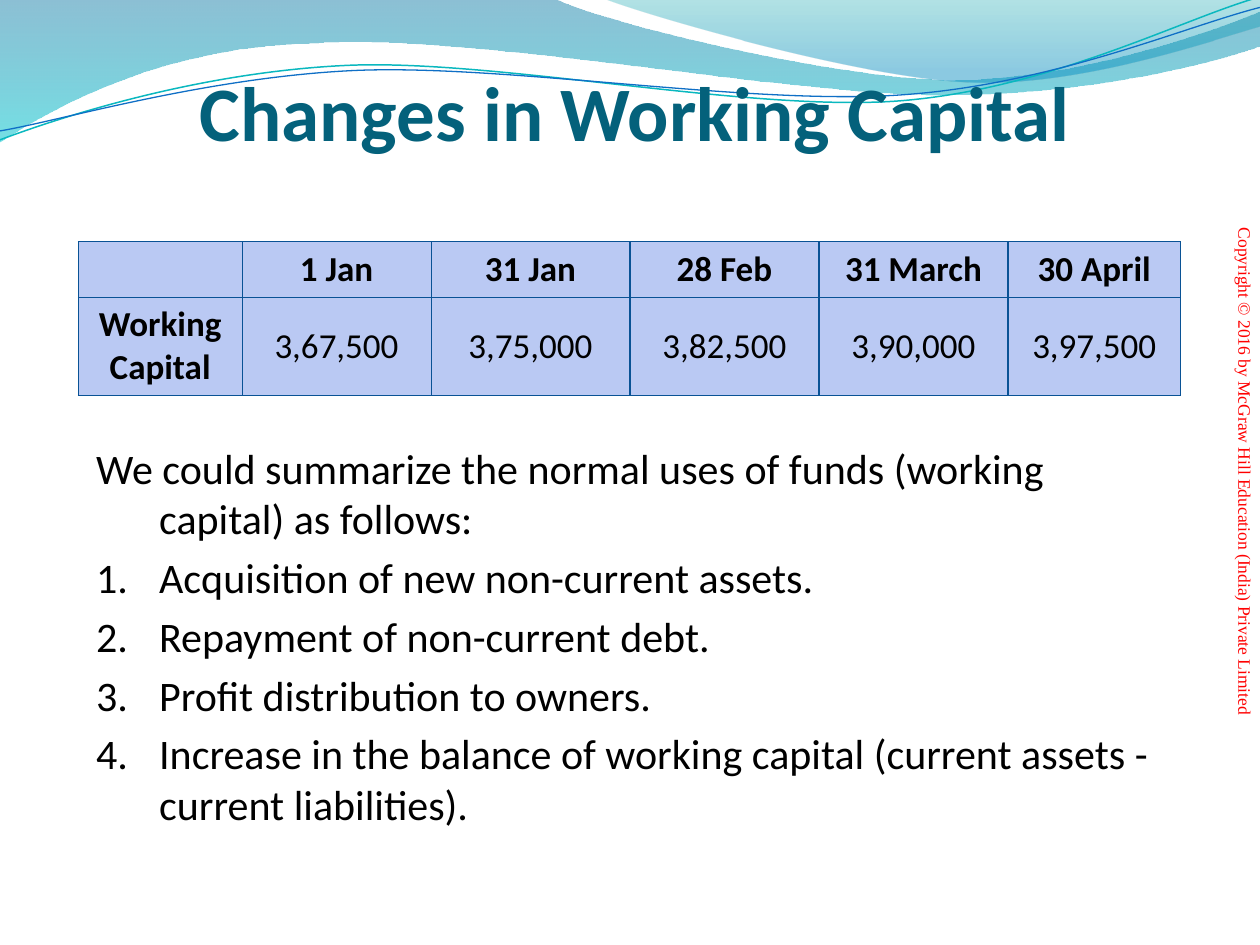
from lxml import etree
from pptx import Presentation
from pptx import util as u
from pptx.dml.color import RGBColor
from pptx.enum import text
from pptx.oxml import ns

BLACK = RGBColor(0x00, 0x00, 0x00)
RED = RGBColor(0xFF, 0x00, 0x00)
TITLE_TEAL = RGBColor(0x04, 0x61, 0x7B)
CELL_BLUE = RGBColor(0xBA, 0xC9, 0xF3)
BORDER_BLUE = RGBColor(0x09, 0x52, 0x95)
WAVE_BLUE = RGBColor(0x00, 0x74, 0xA1)
WAVE_CYAN = RGBColor(0x00, 0xC6, 0xCF)
CREST_TEAL = RGBColor(0x00, 0xA1, 0xA9)
CREST_BLUE = RGBColor(0x00, 0x8B, 0xBF)
LINE_TEAL = RGBColor(0x0A, 0xB8, 0xBF)
LINE_BLUE = RGBColor(0x0F, 0x6F, 0xC6)


def add_curve(shapes, start, segments, close):
    """Draw straight segments (one point) and Bezier segments (three points), in cm."""
    builder = shapes.build_freeform(u.Cm(start[0]), u.Cm(start[1]))
    builder.add_line_segments([(u.Cm(x), u.Cm(y)) for segment in segments for x, y in segment],
                              close=close)
    shape = builder.convert_to_shape()
    shape.shadow.inherit = False
    # Join each run of three straight steps into one Bezier step
    steps = iter(list(shape._element.iter(ns.qn("a:lnTo"))))
    for segment in segments:
        first, *others = [next(steps) for _ in segment]
        if others:
            bezier = etree.Element(ns.qn("a:cubicBezTo"))
            first.addprevious(bezier)
            for step in (first, *others):
                bezier.append(step[0])
                step.getparent().remove(step)
    return shape


def style(paragraph, size, color, bold=False, font_name="Calibri"):
    font = paragraph.font
    font.name, font.size, font.bold = font_name, u.Pt(size), bold
    font.color.rgb = color


presentation = Presentation()
presentation.slide_width, presentation.slide_height = u.Cm(25.4), u.Cm(19.05)
slide = presentation.slides.add_slide(presentation.slide_layouts[5])
shapes = slide.shapes

# Filled waves: start, segments, gradient stops (position, colour, opacity %)
waves = [
    ((0, 0),
     [[(11.18, -0.03)],
      [(12.09, 0.43), (16.87, 1.6), (19.25, 1.6)],
      [(21.67, 1.6), (24.33, 0.66), (25.4, 0.23)],
      [(25.43, 0.91)],
      [(24.97, 1.12), (22.1, 1.93), (18.95, 1.91)],
      [(15.8, 1.91), (9.7, 0.71), (6.53, 0.86)],
      [(3.28, 0.91), (1.17, 2.11), (-0.03, 2.87)],
      [(0, 0)]],
     [(0, WAVE_BLUE, 45), (1, WAVE_CYAN, 55)]),
    ((12.17, -0.03),
     [[(12.93, 0.28), (17.32, 1.57), (19.53, 1.65)],
      [(21.74, 1.75), (24.41, 0.81), (25.4, 0.53)],
      [(25.4, 0)],
      [(12.17, -0.03)]],
     [(0, CREST_TEAL, 30), (0.8, CREST_BLUE, 45)]),
]
for start, segments, stops in waves:
    shape = add_curve(shapes, start, segments, True)
    shape.line.fill.background()
    shape.fill.gradient()
    shape.fill.gradient_angle = 270
    for stop, (position, color, opacity) in zip(shape.fill.gradient_stops, stops):
        stop.position = position
        stop.color.rgb = color
    for element, (_, _, opacity) in zip(shape._element.iter(ns.qn("a:srgbClr")), stops):
        etree.SubElement(element, ns.qn("a:alpha"), val=str(opacity * 1000))

# Thin wave lines, slightly tilted
wave_lines = [
    ((-0.05, 2.22),
     [[(1.19, 1.82), (4.02, 1.04), (7.05, 1.05)],
      [(10.05, 1.07), (15.02, 2.37), (18.08, 2.29)],
      [(21.13, 2.2), (23.87, 0.91), (25.41, 0.55)]], LINE_TEAL, 0.85),
    ((-0.04, 2.04),
     [[(1.16, 1.9), (4.18, 1.15), (7.2, 1.16)],
      [(10.25, 1.18), (15.13, 2.25), (18.18, 2.17)],
      [(21.21, 2.1), (23.93, 1.06), (25.45, 0.75)]], LINE_BLUE, 0.75),
]
line_group = shapes.add_group_shape()
for start, segments, color, width in wave_lines:
    shape = add_curve(line_group.shapes, start, segments, False)
    shape.rotation = -2.7
    shape.fill.background()
    shape.line.color.rgb = color
    shape.line.width = u.Pt(width)

# Copyright line along the right edge
copyright_box = shapes.add_textbox(u.Cm(17.36), u.Cm(8.87), u.Cm(16.08), u.Cm(1.27))
copyright_box.rotation = 90
frame = copyright_box.text_frame
frame.word_wrap = True
frame.vertical_anchor = text.MSO_ANCHOR.BOTTOM
paragraph = frame.paragraphs[0]
paragraph.text = "Copyright © 2016 by McGraw Hill Education (India) Private Limited"
paragraph.alignment = text.PP_ALIGN.CENTER
style(paragraph, 10, RED, font_name="Times New Roman")

# Title, brought in front of the waves
title = shapes.title
shapes._spTree.append(title._element)
title.left, title.top, title.width, title.height = u.Cm(1.69), u.Cm(-0.21), u.Cm(22.23), u.Cm(3.38)
frame = title.text_frame
frame.text = "Changes in Working Capital"
frame.auto_size = text.MSO_AUTO_SIZE.NONE
frame.vertical_anchor = text.MSO_ANCHOR.BOTTOM
frame.margin_left = frame.margin_right = frame.margin_bottom = 0
frame.paragraphs[0].alignment = text.PP_ALIGN.CENTER
style(frame.paragraphs[0], 44, TITLE_TEAL, bold=True)

# Working capital table
rows = [
    ["", "1 Jan", "31 Jan", "28 Feb", "31 March", "30 April"],
    ["Working Capital", "3,67,500", "3,75,000", "3,82,500", "3,90,000", "3,97,500"],
]
column_widths = [3.3, 3.81, 4.01, 3.81, 3.81, 3.48]
row_heights = [1.12, 1.98]
table = shapes.add_table(len(rows), len(column_widths), u.Cm(1.58), u.Cm(4.87),
                         u.Cm(sum(column_widths)), u.Cm(sum(row_heights))).table
table.first_row = table.horz_banding = False
for column, width in zip(table.columns, column_widths):
    column.width = u.Cm(width)
for row, height in zip(table.rows, row_heights):
    row.height = u.Cm(height)
for r, values in enumerate(rows):
    for c, value in enumerate(values):
        cell = table.cell(r, c)
        cell.text = value
        cell.vertical_anchor = text.MSO_ANCHOR.MIDDLE
        paragraph = cell.text_frame.paragraphs[0]
        paragraph.alignment = text.PP_ALIGN.CENTER
        style(paragraph, 20, BLACK, bold=r == 0 or c == 0)
        properties = cell._tc.get_or_add_tcPr()
        for side in ("a:lnL", "a:lnR", "a:lnT", "a:lnB"):
            border = etree.SubElement(properties, ns.qn(side), w=str(u.Pt(0.75)))
            fill = etree.SubElement(border, ns.qn("a:solidFill"))
            etree.SubElement(fill, ns.qn("a:srgbClr"), val=str(BORDER_BLUE))
        cell.fill.solid()
        cell.fill.fore_color.rgb = CELL_BLUE

# Uses of funds: lead-in and numbered list
uses = [
    "We could summarize the normal uses of funds (working capital) as follows:",
    "Acquisition of new non-current assets.",
    "Repayment of non-current debt.",
    "Profit distribution to owners.",
    "Increase in the balance of working capital (current assets - current liabilities).",
]
frame = shapes.add_textbox(u.Cm(1.69), u.Cm(8.68), u.Cm(22.23), u.Cm(8.26)).text_frame
frame.word_wrap = True
frame.vertical_anchor = text.MSO_ANCHOR.MIDDLE
for i, line in enumerate(uses):
    paragraph = frame.add_paragraph() if i else frame.paragraphs[0]
    paragraph.text = line
    properties = paragraph._p.get_or_add_pPr()
    properties.set("marL", str(u.Cm(1.27)))
    properties.set("indent", str(-u.Cm(1.27)))
    if i:
        etree.SubElement(properties, ns.qn("a:buFont"), typeface="+mj-lt")
        etree.SubElement(properties, ns.qn("a:buAutoNum"), type="arabicPeriod")
        paragraph.space_before = u.Pt(4.8)
    style(paragraph, 24, BLACK)

presentation.save("out.pptx")
